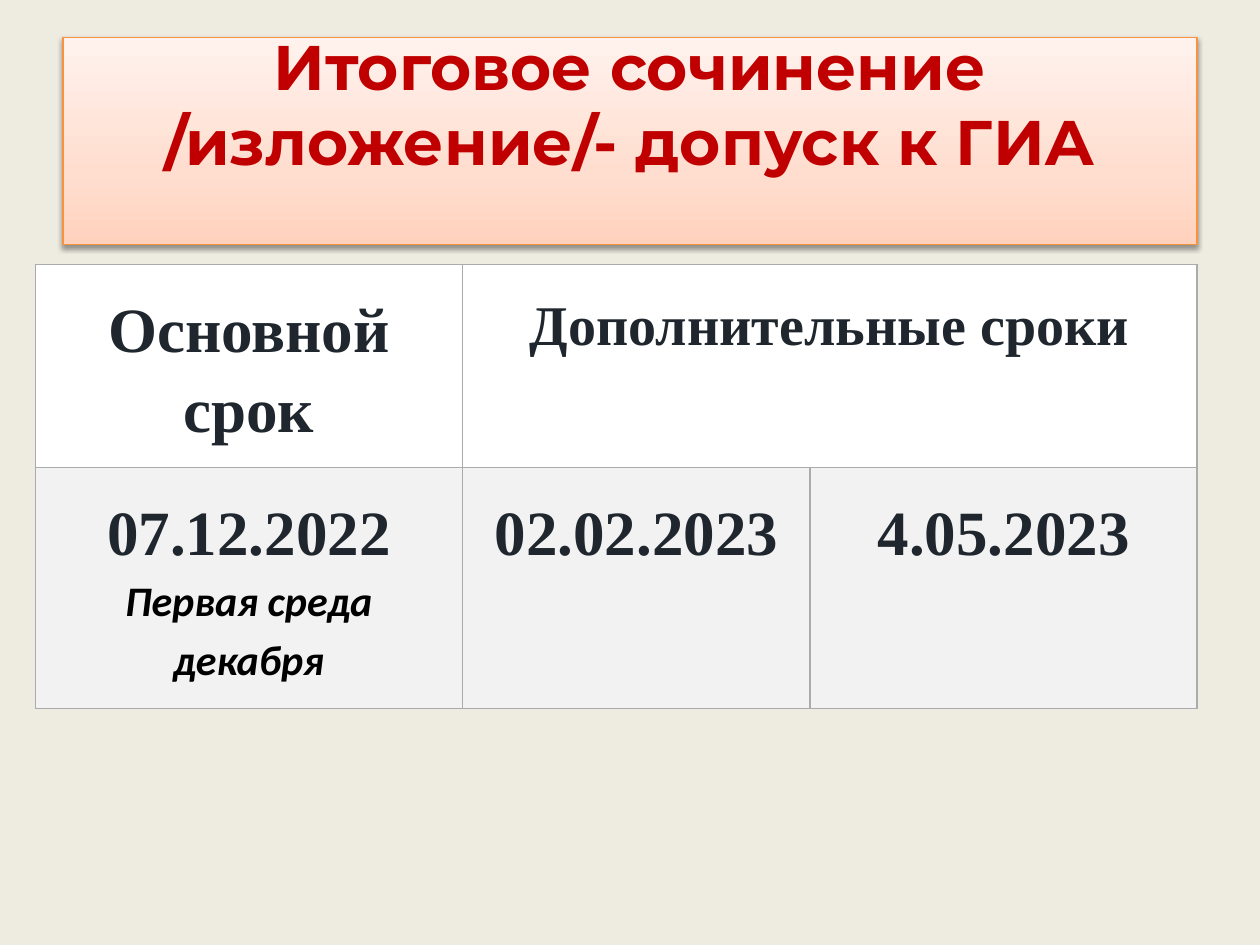
"""Build the slide with the dates of the final essay."""
from dataclasses import dataclass

from pptx import Presentation
from pptx import util as u
from pptx.dml.color import RGBColor
from pptx.enum import shapes, text
from pptx.oxml import parse_xml
from pptx.oxml.ns import nsdecls, qn


@dataclass(frozen=True)
class Theme:
    background: str = "EEECE1"
    title_stops: tuple = ((0, "FFD2BD"), (35, "FFDED0"), (100, "FFF2ED"))
    title_line: str = "F69240"
    title: str = "C00000"
    ink: str = "1F262D"
    note: str = "000000"
    header_fill: str = "FFFFFF"
    date_fill: str = "F2F2F2"
    border: str = "A9ABAD"
    title_font: str = "Montserrat"
    table_font: str = "Times New Roman"
    note_font: str = "Calibri"
    large: int = 36
    medium: int = 32
    small: int = 24


T = Theme()


@dataclass(frozen=True)
class Line:
    words: str
    size: int = T.large
    font: str = T.table_font
    color: str = T.ink
    italic: bool = False


@dataclass(frozen=True)
class Cell:
    row: int
    col: int
    fill: str
    lines: tuple[Line, ...]


CELLS = (
    Cell(0, 0, T.header_fill, (Line("Основной срок"),)),
    Cell(0, 1, T.header_fill, (Line("Дополнительные сроки", T.medium),)),
    Cell(1, 0, T.date_fill, (
        Line("07.12.2022"),
        Line("Первая среда декабря", T.small, T.note_font, T.note, True),
    )),
    Cell(1, 1, T.date_fill, (Line("02.02.2023"),)),
    Cell(1, 2, T.date_fill, (Line("4.05.2023"),)),
)


def rgb(value: str) -> RGBColor:
    return RGBColor.from_string(value)


def write(tf, lines: tuple[Line, ...], spacing: float = 1.0) -> None:
    for i, line in enumerate(lines):
        p = tf.add_paragraph() if i else tf.paragraphs[0]
        p.alignment = text.PP_ALIGN.CENTER
        p.line_spacing = spacing
        r = p.add_run()
        r.text = line.words
        r.font.name = line.font
        r.font.size = u.Pt(line.size)
        r.font.bold = True
        r.font.italic = line.italic
        r.font.color.rgb = rgb(line.color)


def add_title(s) -> None:
    sp = s.shapes.add_shape(shapes.MSO_SHAPE.RECTANGLE, u.Inches(0.5),
                            u.Inches(0.3), u.Inches(9), u.Inches(1.64))
    sp.line.color.rgb = rgb(T.title_line)
    sp.line.width = u.Pt(0.75)
    sp.shadow.inherit = False
    sp_pr = sp._element.spPr
    stops = "".join(f'<a:gs pos="{pos * 1000}"><a:srgbClr val="{color}"/></a:gs>'
                    for pos, color in T.title_stops)
    sp_pr.find(qn("a:prstGeom")).addnext(parse_xml(
        f'<a:gradFill {nsdecls("a")} rotWithShape="1"><a:gsLst>{stops}</a:gsLst>'
        '<a:lin ang="16200000" scaled="0"/></a:gradFill>'))
    sp_pr.find(qn("a:effectLst")).append(parse_xml(
        f'<a:outerShdw {nsdecls("a")} blurRad="{u.Pt(3.1)}" dist="{u.Pt(1.6)}" '
        'dir="5400000" rotWithShape="0"><a:srgbClr val="000000">'
        '<a:alpha val="38000"/></a:srgbClr></a:outerShdw>'))
    tf = sp.text_frame
    tf.word_wrap = True
    tf.vertical_anchor = text.MSO_ANCHOR.MIDDLE
    tf.margin_top, tf.margin_bottom = 0, u.Inches(0.61)
    write(tf, (Line("Итоговое сочинение /изложение/- допуск к ГИА",
                    font=T.title_font, color=T.title),))


def add_borders(cell) -> None:
    tc_pr = cell._tc.get_or_add_tcPr()
    for side in "LRTB":
        tc_pr.append(parse_xml(
            f'<a:ln{side} {nsdecls("a")} w="{u.Pt(1)}"><a:solidFill>'
            f'<a:srgbClr val="{T.border}"/></a:solidFill></a:ln{side}>'))


def add_dates(s) -> None:
    widths, heights = (3.39, 2.76, 3.07), (1.34, 1.57)
    table = s.shapes.add_table(
        len(heights), len(widths), u.Inches(0.28), u.Inches(2.1),
        u.Inches(sum(widths)), u.Inches(sum(heights))).table
    table.first_row = table.horz_banding = False
    for column, width in zip(table.columns, widths):
        column.width = u.Inches(width)
    for row, height in zip(table.rows, heights):
        row.height = u.Inches(height)
    table.cell(0, 1).merge(table.cell(0, 2))
    for cell in table.iter_cells():
        add_borders(cell)
    for item in CELLS:
        cell = table.cell(item.row, item.col)
        cell.fill.solid()
        cell.fill.fore_color.rgb = rgb(item.fill)
        cell.margin_left = cell.margin_right = u.Inches(0.2)
        cell.margin_top = cell.margin_bottom = u.Inches(0.17)
        write(cell.text_frame, item.lines, 1.15)


def main() -> None:
    prs = Presentation()
    prs.slide_width, prs.slide_height = u.Inches(10), u.Inches(7.5)
    s = prs.slides.add_slide(prs.slide_layouts[6])
    s.background.fill.solid()
    s.background.fill.fore_color.rgb = rgb(T.background)
    add_title(s)
    add_dates(s)
    prs.save("out.pptx")


if __name__ == "__main__":
    main()
